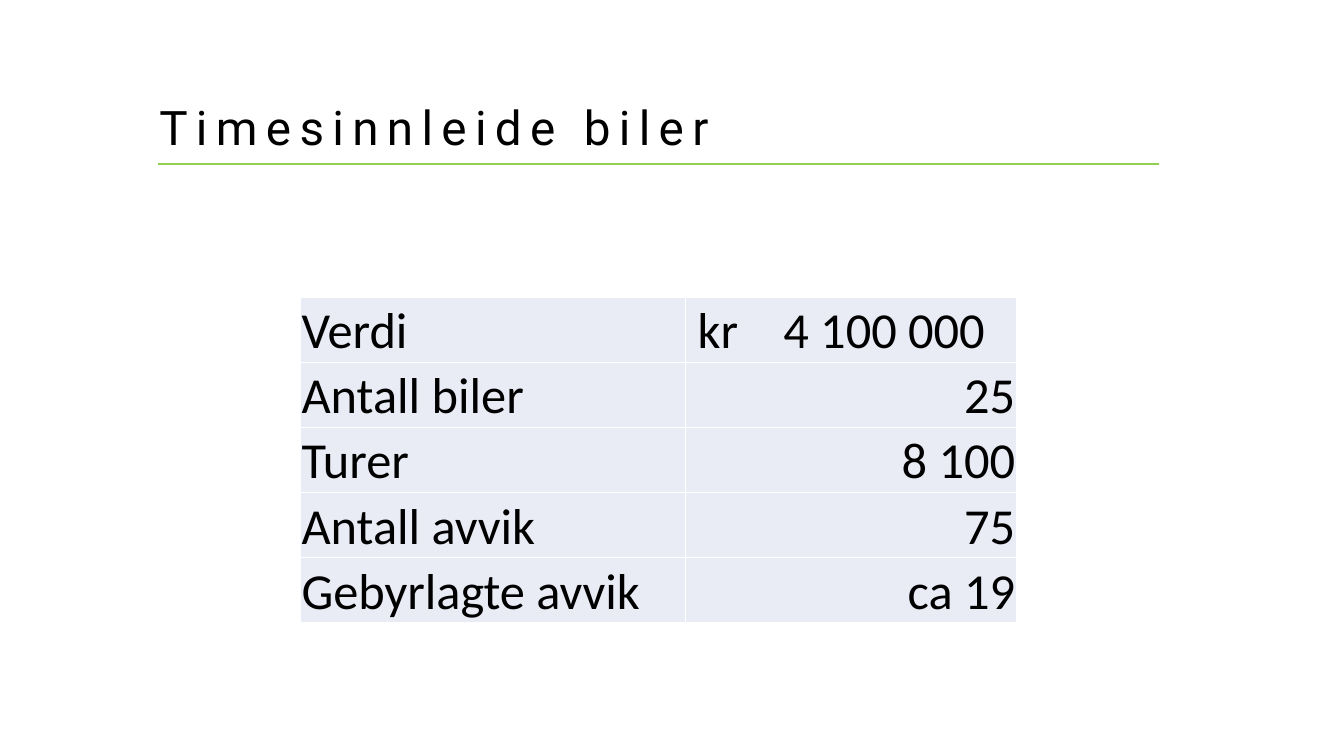
from dataclasses import dataclass

from lxml import etree
from pptx import Presentation, util as u
from pptx.dml.color import RGBColor
from pptx.enum import shapes, text
from pptx.oxml import ns


@dataclass(frozen=True)
class Theme:
    ink: str = "000000"
    accent: str = "92D050"
    cell: str = "E9EBF5"
    border: str = "FFFFFF"
    title_font: str = "Roboto"
    body_font: str = "Calibri"
    title_size: float = 34
    body_size: float = 36
    title_spacing: float = 6
    rule_width: float = 1.5
    border_width: float = 1


class PageBuilder:
    """Places elements on one page; lengths are percent of the slide's size."""

    def __init__(self, deck, theme):
        self.deck, self.theme = deck, theme
        self.page = deck.slides.add_slide(deck.slide_layouts[5])

    def x(self, share):
        return round(self.deck.slide_width * share / 100)

    def y(self, share):
        return round(self.deck.slide_height * share / 100)

    def style(self, para, font, size):
        for span in para.runs:
            span.font.name = font
            span.font.size = u.Pt(size)
            span.font.color.rgb = RGBColor.from_string(self.theme.ink)

    def title(self, words, left, top, width, height):
        box = self.page.shapes.title
        box.left, box.top = self.x(left), self.y(top)
        box.width, box.height = self.x(width), self.y(height)
        frame = box.text_frame
        frame.text = words
        frame.auto_size = text.MSO_AUTO_SIZE.NONE
        frame.vertical_anchor = text.MSO_ANCHOR.MIDDLE
        para = frame.paragraphs[0]
        para.alignment = text.PP_ALIGN.LEFT
        para.line_spacing = 0.9
        self.style(para, self.theme.title_font, self.theme.title_size)
        spacing = round(self.theme.title_spacing * 100)
        para.runs[0].font._element.set("spc", str(spacing))

    def rule(self, left, right, top):
        line = self.page.shapes.add_connector(
            shapes.MSO_CONNECTOR.STRAIGHT,
            self.x(left), self.y(top), self.x(right), self.y(top))
        line.line.color.rgb = RGBColor.from_string(self.theme.accent)
        line.line.width = u.Pt(self.theme.rule_width)
        etree.SubElement(line._element.spPr, ns.qn("a:effectLst"))

    def table(self, rows, left, top, columns, row_height):
        table = self.page.shapes.add_table(
            len(rows), len(columns), self.x(left), self.y(top),
            self.x(sum(columns)), self.y(row_height * len(rows))).table
        table.first_row = table.horz_banding = False
        for column, width in zip(table.columns, columns):
            column.width = self.x(width)
        for row, (label, value) in zip(table.rows, rows):
            row.height = self.y(row_height)
            self.cell(row.cells[0], label, text.PP_ALIGN.LEFT)
            if "\t" in value:
                self.cell(row.cells[1], value, text.PP_ALIGN.LEFT,
                          margin=0.12, tab=0.85)
            else:
                self.cell(row.cells[1], value, text.PP_ALIGN.RIGHT)

    def cell(self, cell, words, alignment, margin=0.01, tab=None):
        """Fill one table cell; margin and tab stop are in inches."""
        cell.margin_left = u.Inches(margin)
        cell.margin_right = cell.margin_top = u.Inches(0.01)
        cell.margin_bottom = 0
        cell.vertical_anchor = text.MSO_ANCHOR.BOTTOM
        for side in ("lnL", "lnR", "lnT", "lnB"):
            edge = etree.SubElement(cell._tc.tcPr, ns.qn(f"a:{side}"),
                                    w=str(u.Pt(self.theme.border_width)))
            paint = etree.SubElement(edge, ns.qn("a:solidFill"))
            etree.SubElement(paint, ns.qn("a:srgbClr"), val=self.theme.border)
        cell.fill.solid()
        cell.fill.fore_color.rgb = RGBColor.from_string(self.theme.cell)
        para = cell.text_frame.paragraphs[0]
        para.text = words
        para.alignment = alignment
        if tab is not None:
            stops = etree.SubElement(para._p.get_or_add_pPr(), ns.qn("a:tabLst"))
            etree.SubElement(stops, ns.qn("a:tab"), pos=str(u.Inches(tab)), algn="l")
        self.style(para, self.theme.body_font, self.theme.body_size)


def main():
    deck = Presentation()
    deck.slide_width, deck.slide_height = u.Inches(13.33), u.Inches(7.5)
    builder = PageBuilder(deck, Theme())
    builder.rule(left=11.78, right=86.2, top=21.73)
    builder.title("Timesinnleide biler", left=11.1, top=12.93, width=75, height=8.53)
    builder.table(
        [("Verdi", "kr\t4 100 000"),
         ("Antall biler", "25"),
         ("Turer", "8 100"),
         ("Antall avvik", "75"),
         ("Gebyrlagte avvik", "ca 19")],
        left=22.36, top=39.33, columns=(28.65, 24.6), row_height=8.61)
    deck.save("out.pptx")


if __name__ == "__main__":
    main()
